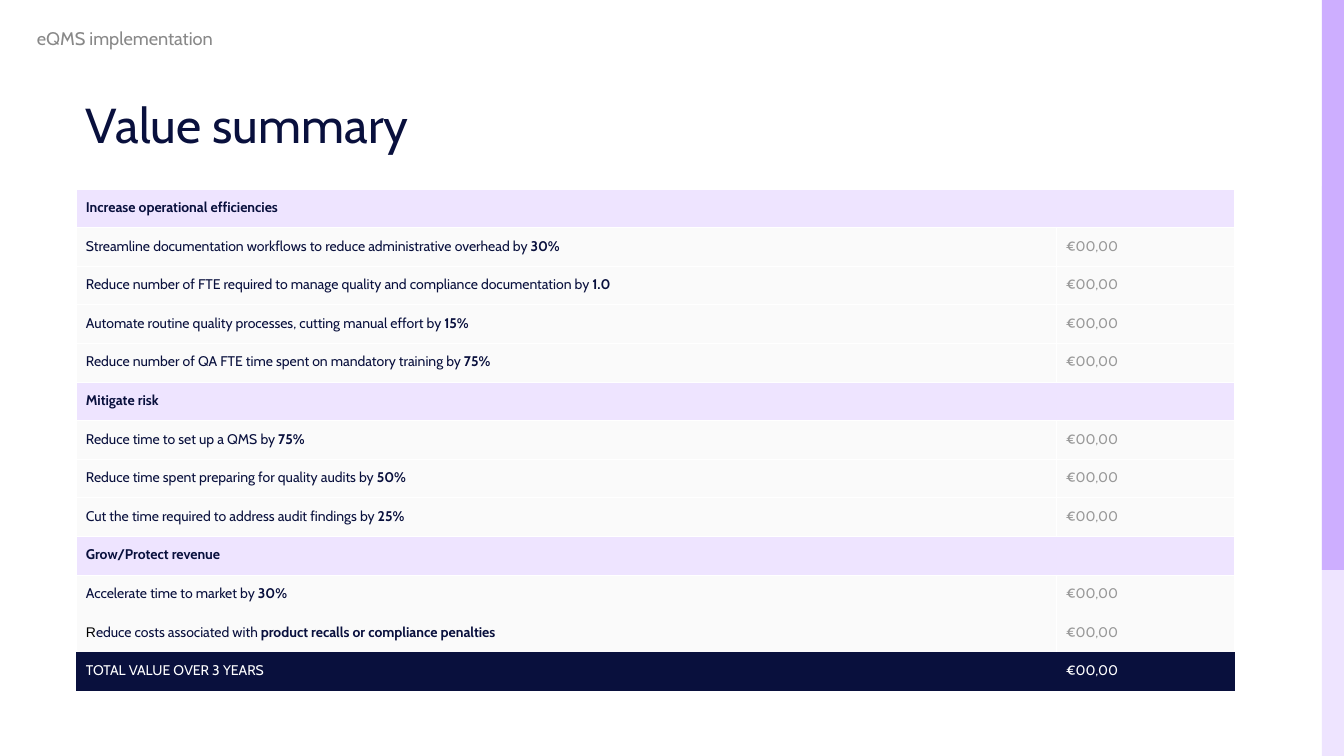
from pptx import Presentation
from pptx.dml.color import RGBColor
from pptx.enum.shapes import MSO_SHAPE
from pptx.enum.text import MSO_ANCHOR, MSO_AUTO_SIZE, PP_ALIGN
from pptx.oxml.ns import qn
from pptx.util import Pt
from lxml import etree

RECTANGLE = MSO_SHAPE.RECTANGLE
TOP = MSO_ANCHOR.TOP
NO_AUTOFIT = MSO_AUTO_SIZE.NONE
LEFT = PP_ALIGN.LEFT

NAVY = RGBColor(0x09, 0x10, 0x3D)
LILAC = RGBColor(0xEE, 0xE4, 0xFF)
VIOLET = RGBColor(0xCD, 0xAE, 0xFF)
PALE = RGBColor(0xFA, 0xFA, 0xFA)
WHITE = RGBColor(0xFF, 0xFF, 0xFF)
BLACK = RGBColor(0x00, 0x00, 0x00)
GREY = RGBColor(0x88, 0x88, 0x88)
AMOUNT_GREY = RGBColor(0x99, 0x99, 0x99)

FONT = "Cabin"
EMU_PER_INCH = 914400
PX_PER_INCH = 100.8
AMOUNT = "€00,00"

SECTIONS = [
    ("Increase operational efficiencies", [
        ("Streamline documentation workflows to reduce administrative overhead by ", "30%"),
        ("Reduce number of FTE required to manage quality and compliance documentation by ", "1.0"),
        ("Automate routine quality processes, cutting manual effort by ", "15%"),
        ("Reduce number of QA FTE time spent on mandatory training by ", "75%"),
    ]),
    ("Mitigate risk", [
        ("Reduce time to set up a QMS by ", "75%"),
        ("Reduce time spent preparing for quality audits by ", "50%"),
        ("Cut the time required to address audit findings by ", "25%"),
    ]),
    ("Grow/Protect revenue", [
        ("Accelerate time to market by ", "30%"),
        ("Reduce costs associated with ", "product recalls or compliance penalties"),
    ]),
]
TOTAL = "TOTAL VALUE OVER 3 YEARS"


def px(length):
    return round(length * EMU_PER_INCH / PX_PER_INCH)


def add_text(para, text, size=10, color=NAVY, bold=False, font=FONT):
    para.alignment = LEFT
    span = para.add_run()
    span.text = text
    span.font.name = font
    span.font.size = Pt(size)
    span.font.bold = bold
    span.font.color.rgb = color


def set_margins(frame, side, vertical):
    frame.margin_left = frame.margin_right = px(side)
    frame.margin_top = frame.margin_bottom = px(vertical)


def place(shape, left, top, width, height):
    shape.left, shape.top = px(left), px(top)
    shape.width, shape.height = px(width), px(height)


def set_borders(cell, edges):
    properties = cell._tc.get_or_add_tcPr()
    for edge in "LRTB":
        line = etree.SubElement(properties, qn(f"a:ln{edge}"), w=str(Pt(0.75)))
        if edge in edges:
            fill = etree.SubElement(line, qn("a:solidFill"))
            etree.SubElement(fill, qn("a:srgbClr"), val=str(WHITE))
        else:
            etree.SubElement(line, qn("a:noFill"))


def style_row(cells, color, edges="LRTB"):
    for cell in cells:
        set_borders(cell, edges)
        cell.fill.solid()
        cell.fill.fore_color.rgb = color
        cell.vertical_anchor = TOP
        set_margins(cell, 10, 10)


def add_side_bars(page, left, top, width, height):
    bar_height = 570
    for bar_top, color in ((top + height - bar_height, LILAC), (top, VIOLET)):
        bar = page.shapes.add_shape(RECTANGLE, 0, 0, 0, 0)
        place(bar, left, bar_top, width, bar_height)
        bar.shadow.inherit = False
        bar.fill.solid()
        bar.fill.fore_color.rgb = color
        bar.line.fill.background()


def add_section_label(page, left, top, width, height):
    box = page.shapes.add_textbox(0, 0, 0, 0)
    place(box, left, top, width, height)
    frame = box.text_frame
    frame.word_wrap = True
    set_margins(frame, 10, 10)
    add_text(frame.paragraphs[0], "eQMS implementation", size=13, color=GREY)


def add_title(page, left, top, width, height):
    title = page.shapes.title
    place(title, left, top, width, height)
    frame = title.text_frame
    frame.word_wrap = True
    frame.auto_size = NO_AUTOFIT
    frame.vertical_anchor = TOP
    set_margins(frame, 10, 5)
    para = frame.paragraphs[0]
    para.line_spacing = 1.0
    add_text(para, "Value summary", size=35)


def fill_benefit(cells, lead, result):
    para = cells[0].text_frame.paragraphs[0]
    if lead.startswith("Reduce costs"):
        add_text(para, lead[0], color=BLACK, font="Arial")
        lead = lead[1:]
    add_text(para, lead)
    add_text(para, result, bold=True)
    add_text(cells[1].text_frame.paragraphs[0], AMOUNT, color=AMOUNT_GREY)


def add_value_table(page, left, top, width, height):
    row_count = sum(1 + len(benefits) for _, benefits in SECTIONS) + 1
    frame = page.shapes.add_table(row_count, 2, px(left), px(top), px(width), px(height))
    table = frame.table
    table.first_row = table.horz_banding = False
    amount_width = 179
    table.columns[0].width = px(width - amount_width)
    table.columns[1].width = px(amount_width)
    rows = iter(table.rows)
    for heading, benefits in SECTIONS:
        cells = list(next(rows).cells)
        style_row(cells, LILAC)
        cells[0].merge(cells[1])
        add_text(cells[0].text_frame.paragraphs[0], heading, bold=True)
        for lead, result in benefits:
            cells = list(next(rows).cells)
            edges = "LRTB"
            if heading == SECTIONS[-1][0]:
                edges = "LR" if (lead, result) == benefits[-1] else "LRT"
            style_row(cells, PALE, edges)
            fill_benefit(cells, lead, result)
    cells = list(next(rows).cells)
    style_row(cells, NAVY, "")
    for cell, text in zip(cells, (TOTAL, AMOUNT)):
        add_text(cell.text_frame.paragraphs[0], text, color=WHITE)


def main():
    deck = Presentation()
    deck.slide_width, deck.slide_height = px(1344), px(756)
    page = deck.slides.add_slide(deck.slide_layouts[5])
    add_side_bars(page, 1322, 0, 22, 756)
    add_section_label(page, 27, 17, 218, 40)
    add_value_table(page, 76, 189, 1159, 502)
    add_title(page, 76, 89, 784, 70)
    deck.save("out.pptx")


if __name__ == "__main__":
    main()
